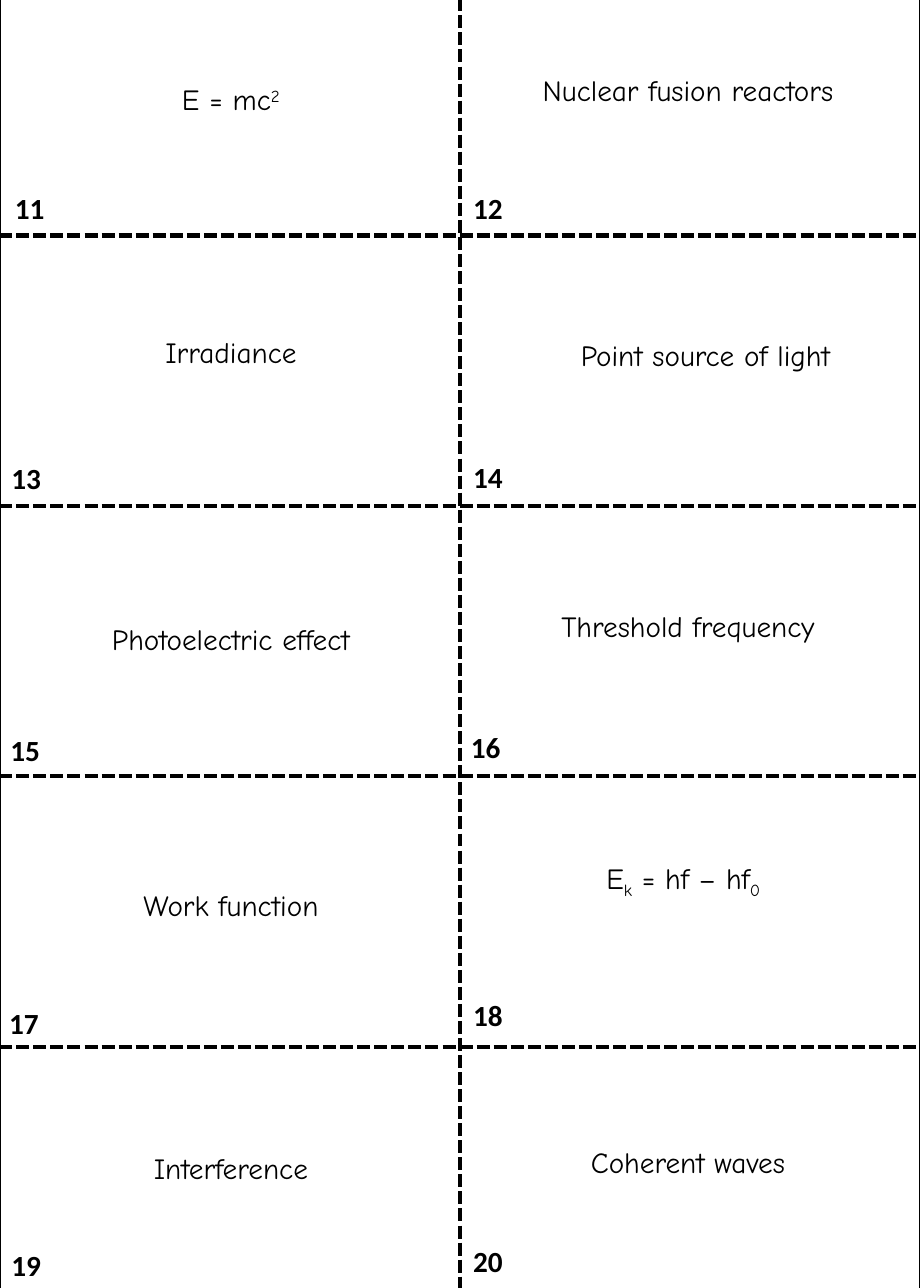
from pptx import Presentation
from pptx.dml.color import RGBColor
from pptx.enum.text import MSO_AUTO_SIZE as AutoSize, PP_ALIGN as Align
from pptx.oxml import parse_xml
from pptx.oxml.ns import nsdecls
from pptx.util import Inches, Pt

W, H = 7.87, 11.02
COLS, ROWS = 2, 5
TABLE_TOP, TABLE_H = -0.3, 11.57
BLACK = "000000"
TERM = {"name": "Comic Neue", "size": Pt(18)}
NUMBER = {"name": "Calibri", "size": Pt(18), "bold": True}

CARDS = [
    ([("E = mc", 0), ("2", 30)], 0.55, 0.65, 0.03, 1.58),
    ([("Nuclear fusion reactors", 0)], 4.46, 0.57, 3.95, 1.58),
    ([("Irradiance", 0)], 0.55, 2.81, 0, 3.89),
    ([("Point source of light", 0)], 4.61, 2.84, 3.95, 3.88),
    ([("Photoelectric effect", 0)], 0.55, 5.27, -0.01, 6.22),
    ([("Threshold frequency", 0)], 4.46, 5.16, 3.93, 6.19),
    ([("Work function", 0)], 0.55, 7.54, -0.02, 8.55),
    ([("E", 0), ("k", -25), (" = hf – hf", 0), ("0", -25)], 4.42, 7.31, 3.95, 8.48),
    ([("Interference", 0)], 0.55, 9.79, 0, 10.62),
    ([("Coherent waves", 0)], 4.46, 9.74, 3.95, 10.59),
]


def add_text(s, left, top, width, runs, font, align):
    box = s.shapes.add_textbox(Inches(left), Inches(top), Inches(width), Inches(0.4))
    tf = box.text_frame
    tf.word_wrap = True
    tf.auto_size = AutoSize.SHAPE_TO_FIT_TEXT
    p = tf.paragraphs[0]
    p.alignment = align
    for text, baseline in runs:
        r = p.add_run()
        r.text = text
        for key, value in font.items():
            setattr(r.font, key, value)
        r.font.color.rgb = RGBColor.from_string(BLACK)
        if baseline:
            r.font._element.set("baseline", str(baseline * 1000))


def add_border(cell, side, inner):
    width, dash = (3, "dash") if inner else (1, "solid")
    cell._tc.get_or_add_tcPr().append(parse_xml(
        f'<a:ln{side} {nsdecls("a")} w="{Pt(width)}"><a:solidFill>'
        f'<a:srgbClr val="{BLACK}"/></a:solidFill><a:prstDash val="{dash}"/></a:ln{side}>'))


prs = Presentation()
prs.slide_width, prs.slide_height = Inches(W), Inches(H)
s = prs.slides.add_slide(prs.slide_layouts[6])

grid = s.shapes.add_table(ROWS, COLS, 0, Inches(TABLE_TOP), Inches(W), Inches(TABLE_H)).table
for column in grid.columns:
    column.width = Inches(W / COLS)
for row in grid.rows:
    row.height = Inches(TABLE_H / ROWS)
for i in range(ROWS):
    for j in range(COLS):
        cell = grid.cell(i, j)
        inner_sides = {"L": j > 0, "R": j < COLS - 1, "T": i > 0, "B": i < ROWS - 1}
        for side, inner in inner_sides.items():
            add_border(cell, side, inner)
        cell.fill.background()

for number, (term, left, top, num_left, num_top) in enumerate(CARDS, 11):
    add_text(s, left, top, 2.85, term, TERM, Align.CENTER)
    add_text(s, num_left, num_top, 0.53, [(str(number), 0)], NUMBER, Align.LEFT)

prs.save("out.pptx")
